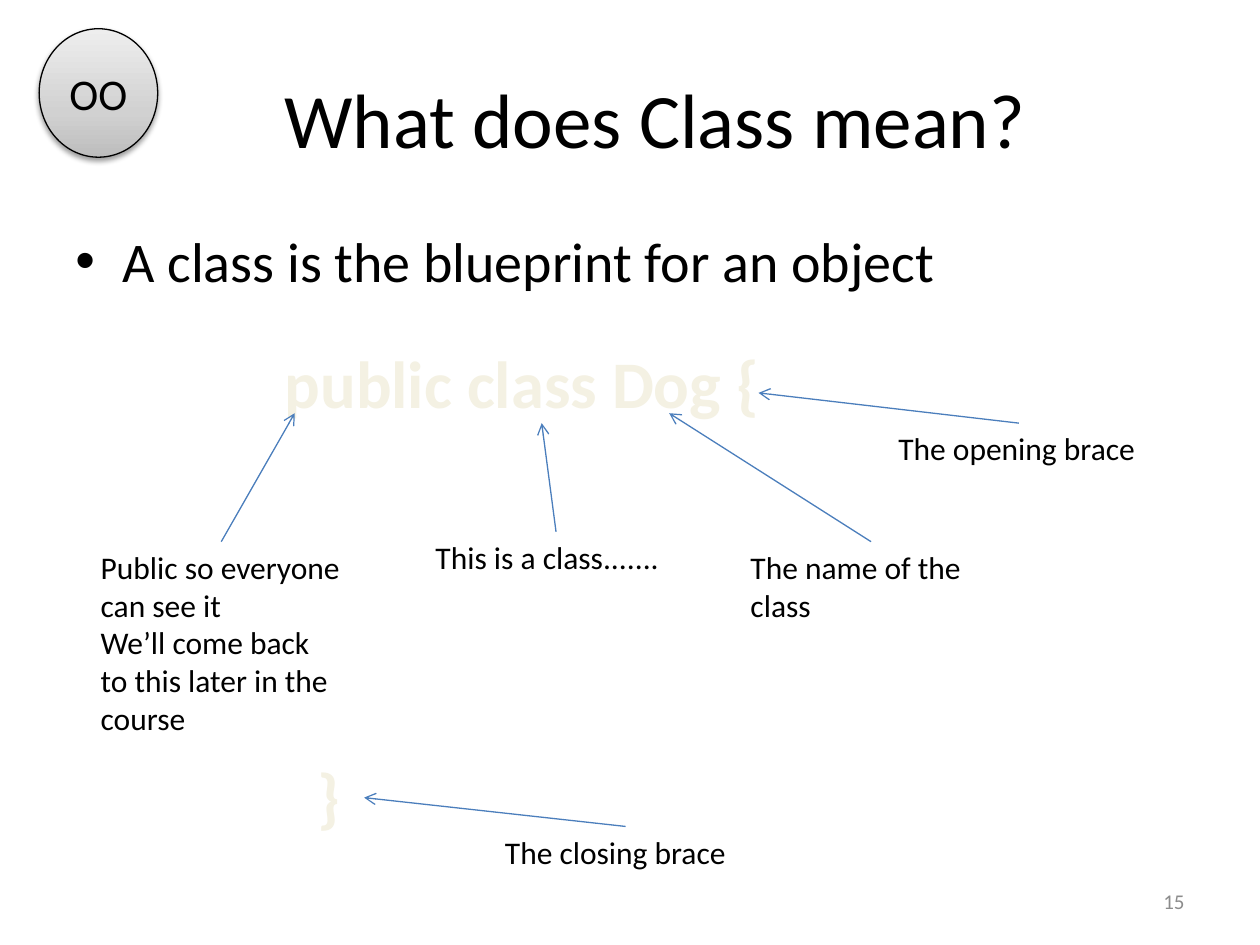
"""Build a slide that explains the parts of a class declaration."""
from copy import deepcopy

from lxml import etree
from pptx import Presentation
from pptx.dml.color import RGBColor
from pptx.enum.shapes import MSO_CONNECTOR, MSO_SHAPE
from pptx.enum.text import MSO_ANCHOR, PP_ALIGN
from pptx.oxml import parse_xml
from pptx.util import Cm, Pt

LEFT, CENTER, RIGHT = PP_ALIGN.LEFT, PP_ALIGN.CENTER, PP_ALIGN.RIGHT
TOP, MIDDLE = MSO_ANCHOR.TOP, MSO_ANCHOR.MIDDLE
NS = "http://schemas.openxmlformats.org/drawingml/2006/main"

THEME = {
    "font": "Calibri",
    "text": "000000", "code": "F4F1E3", "code_edge": "054697",
    "arrow": "4B7EBC", "muted": "8C8C8C",
    "badge": [(0, "BDBDBD"), (0.35, "D1D1D1"), (1, "EEEEEE")],
    "title_size": 44, "bullet_size": 32, "code_size": 38,
    "badge_size": 25, "label_size": 18, "number_size": 12,
    "line": 0.75,
}

TITLE = ("What does Class mean?", (1.78, 0.79, 22.86, 3.18))
BULLET = ("A class is the blueprint for an object", (1.27, 4.45, 22.86, 12.57))
BADGE = ("OO", (0.79, 0.58, 2.39, 2.59))
NUMBER = ("15", (18.21, 17.65, 5.92, 1.02))
CODE = [
    ("}", (5.56, 15.09, 2.18, 1.88), LEFT, 0.6),
    ("public class Dog {", (2.59, 6.76, 15.88, 1.88), CENTER, 0),
]
LABELS = [
    (["Public so everyone can see it",
      "We’ll come back to this later in the course"], 5, (1.78, 10.92), (5.94, 8.33)),
    (["This is a class......."], 1, (8.53, 10.72), (10.92, 8.53)),
    (["The name of the class"], 2, (14.88, 10.92), (13.49, 8.33)),
    (["The opening brace"], 1, (17.86, 8.53), (15.29, 7.92)),
    (["The closing brace"], 1, (9.93, 16.66), (7.34, 16.08)),
]
LABEL_WIDTH, LABEL_LINE, LABEL_PADDING = 5.36, 0.77, 0.25


def cm(values):
    return [Cm(v) for v in values]


def place(sp, box):
    for name, value in zip(("left", "top", "width", "height"), cm(box)):
        setattr(sp, name, value)


def write(sp, lines, size, color="text", align=LEFT, anchor=TOP, bold=False):
    tf = sp.text_frame
    tf.word_wrap = True
    tf.vertical_anchor = anchor
    tf.text = "\n".join(lines)
    style = {"name": THEME["font"], "size": Pt(THEME[size]), "bold": bold}
    for p in tf.paragraphs:
        p.alignment = align
        for r in p.runs:
            for name, value in style.items():
                setattr(r.font, name, value)
            r.font.color.rgb = RGBColor.from_string(THEME[color])
    return tf.paragraphs[0]


def add_text(s, box, lines, size, **style):
    return write(s.shapes.add_textbox(*cm(box)), lines, size, **style)


def add_bullet(s):
    text, box = BULLET
    p = add_text(s, box, [text], "bullet_size")
    p.space_before = Pt(6.4)
    pPr = p._p.get_or_add_pPr()
    pPr.set("marL", str(Cm(0.95)))
    pPr.set("indent", str(Cm(-0.95)))
    etree.SubElement(pPr, f"{{{NS}}}buFont").set("typeface", "Arial")
    etree.SubElement(pPr, f"{{{NS}}}buChar").set("char", "•")


def add_badge(s):
    text, box = BADGE
    sp = s.shapes.add_shape(MSO_SHAPE.OVAL, *cm(box))
    sp.fill.gradient()
    sp.fill.gradient_angle = 90
    stops = sp._element.spPr.find(f".//{{{NS}}}gsLst")
    stops.append(deepcopy(stops[0]))
    for stop, (position, color) in zip(sp.fill.gradient_stops, THEME["badge"]):
        stop.position = position
        stop.color.rgb = RGBColor.from_string(color)
    sp.line.color.rgb = RGBColor.from_string(THEME["text"])
    sp.line.width = Pt(THEME["line"])
    sp._element.spPr.append(parse_xml(
        f'<a:effectLst xmlns:a="{NS}"><a:outerShdw blurRad="40000" dist="20000" '
        'dir="5400000" rotWithShape="0"><a:srgbClr val="000000">'
        '<a:alpha val="38000"/></a:srgbClr></a:outerShdw></a:effectLst>'))
    write(sp, [text], "badge_size", align=CENTER, anchor=MIDDLE)


def add_code(s, text, box, align, indent):
    p = add_text(s, box, [text], "code_size", color="code", align=align, bold=True)
    p._p.get_or_add_pPr().set("marL", str(Cm(indent)))
    p.runs[0].font._element.insert(0, parse_xml(
        f'<a:ln xmlns:a="{NS}" w="12700"><a:solidFill>'
        f'<a:srgbClr val="{THEME["code_edge"]}"/></a:solidFill></a:ln>'))


def add_label(s, lines, rows, corner, tip):
    left, top = corner
    height = LABEL_PADDING + rows * LABEL_LINE
    add_text(s, (left, top, LABEL_WIDTH, height), lines, "label_size")
    start = (left + LABEL_WIDTH / 2, top)
    arrow = s.shapes.add_connector(MSO_CONNECTOR.STRAIGHT, *cm(start + tip))
    arrow.line.color.rgb = RGBColor.from_string(THEME["arrow"])
    arrow.line.width = Pt(THEME["line"])
    spPr = arrow._element.spPr
    etree.SubElement(spPr.find(f"{{{NS}}}ln"), f"{{{NS}}}tailEnd").set("type", "arrow")
    etree.SubElement(spPr, f"{{{NS}}}effectLst")


def main():
    prs = Presentation()
    prs.slide_width, prs.slide_height = cm((25.4, 19.05))
    s = prs.slides.add_slide(prs.slide_layouts[5])
    text, box = TITLE
    place(s.shapes.title, box)
    write(s.shapes.title, [text], "title_size", align=CENTER, anchor=MIDDLE)
    add_bullet(s)
    add_badge(s)
    for code in CODE:
        add_code(s, *code)
    for label in LABELS:
        add_label(s, *label)
    text, box = NUMBER
    add_text(s, box, [text], "number_size", color="muted", align=RIGHT, anchor=MIDDLE)
    prs.save("out.pptx")


if __name__ == "__main__":
    main()
